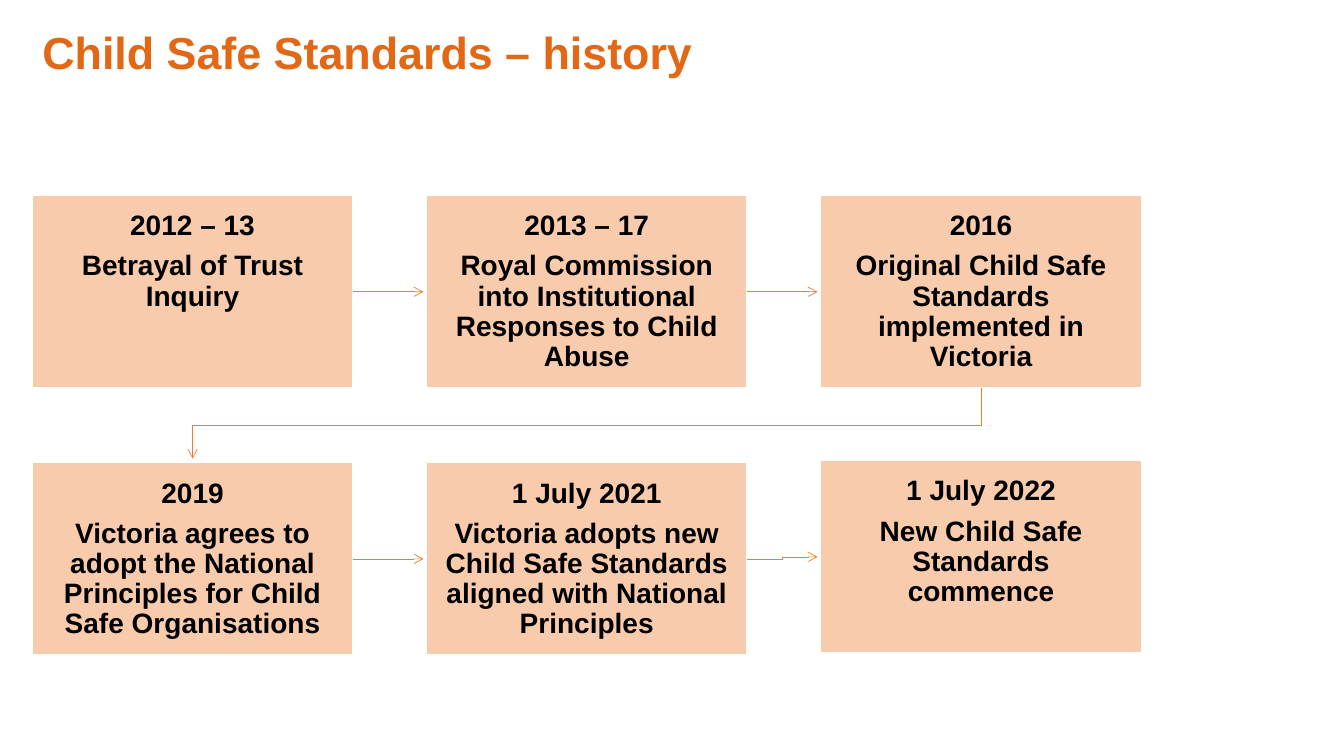
from dataclasses import dataclass

from lxml.etree import SubElement
from pptx import Presentation
from pptx.dml.color import RGBColor
from pptx.enum.shapes import MSO_CONNECTOR as Link, MSO_SHAPE as Shape
from pptx.enum.text import MSO_ANCHOR as Anchor, MSO_AUTO_SIZE as Auto, PP_ALIGN as Align
from pptx.oxml.ns import qn
from pptx.util import Pt

PX = 9144  # EMU in one px, 100 px to the inch
HUE = {"title": "E26815", "box": "F8CBAD", "edge": "FFFFFF", "arrow": "ED7D31", "text": "000000"}
LEFT, TOP, WIDE, HIGH = 32, 194, 318, 191
STEP_X, STEP_Y, COLS = 391, 265, 3
GAP = 3  # space between an arrow tip and its box


@dataclass
class Stage:
    date: str
    lines: tuple[str, ...]
    lift: int = 0


STAGES = [
    Stage("2012 – 13", ("Betrayal of Trust Inquiry",)),
    Stage("2013 – 17", ("Royal Commission into Institutional Responses to Child Abuse",)),
    Stage("2016", ("Original Child Safe Standards implemented in Victoria",)),
    Stage("2019", ("Victoria agrees to adopt the National Principles for Child Safe Organisations",)),
    Stage("1 July 2021", ("Victoria adopts new Child Safe Standards aligned with National Principles",)),
    Stage("1 July 2022", ("New Child Safe Standards", "commence"), lift=2),
]


def color(name: str) -> RGBColor:
    return RGBColor.from_string(HUE[name])


def apply(target, form: dict) -> None:
    for key, value in form.items():
        setattr(target, key, value)


def write(frame, lines: list[str], size: int, hue: str, align, inset: int) -> None:
    """Fill a text frame with bold paragraphs, spaced after the first."""
    apply(frame, {"word_wrap": True, "auto_size": Auto.NONE, "vertical_anchor": Anchor.TOP})
    if inset:
        apply(frame, {f"margin_{side}": inset * PX for side in ("left", "top", "right", "bottom")})
    frame.text = "\n".join(lines)
    for i, para in enumerate(frame.paragraphs):
        after = Pt(7) if i == 0 and len(lines) > 1 else Pt(0)
        apply(para, {"alignment": align, "line_spacing": 0.9, "space_before": Pt(0), "space_after": after})
        apply(para.font, {"name": "Arial", "size": Pt(size), "bold": True})
        para.font.color.rgb = color(hue)


def add_box(shapes, stage: Stage, col: int, row: int):
    x, y = LEFT + col * STEP_X, TOP + row * STEP_Y - stage.lift
    box = shapes.add_shape(Shape.RECTANGLE, x * PX, y * PX, WIDE * PX, HIGH * PX)
    box.shadow.inherit = False
    box.fill.solid()
    box.fill.fore_color.rgb = color("box")
    box.line.color.rgb = color("edge")
    box.line.width = Pt(1)
    write(box.text_frame, [stage.date, *stage.lines], 20, "text", Align.CENTER, 16)
    return box


def style_arrow(line) -> None:
    line.color.rgb = color("arrow")
    line.width = Pt(0.5)
    SubElement(line._get_or_add_ln(), qn("a:tailEnd"), type="arrow")


def add_arrow(shapes, start, end) -> None:
    """Link two neighbours in a row, bending if they are not level."""
    x1, y1 = start.left + start.width, start.top + start.height // 2
    x2, y2 = end.left - GAP * PX, end.top + end.height // 2
    kind = Link.STRAIGHT if y1 == y2 else Link.ELBOW
    arrow = shapes.add_connector(kind, x1, y1, x2, y2)
    arrow.begin_connect(start, 3)
    style_arrow(arrow.line)
    SubElement(arrow._element.spPr, qn("a:effectLst"))


def add_turn(shapes, start, end) -> None:
    """Lead from the end of one row to the start of the next."""
    x1, y1 = start.left + start.width // 2, start.top + start.height
    x2, y2 = end.left + end.width // 2, end.top - 4 * PX
    mid = (y1 + end.top) // 2
    pen = shapes.build_freeform(x1, y1)
    pen.add_line_segments([(x1, mid), (x2, mid), (x2, y2)], close=False)
    turn = pen.convert_to_shape()
    turn.shadow.inherit = False
    turn.fill.background()
    style_arrow(turn.line)


def main() -> None:
    deck = Presentation()
    apply(deck, {"slide_width": 1333 * PX, "slide_height": 750 * PX})
    slide = deck.slides.add_slide(deck.slide_layouts[5])
    shapes = slide.shapes
    title = shapes.title
    apply(title, {"left": LEFT * PX, "top": 26 * PX, "width": 1101 * PX, "height": 142 * PX})
    write(title.text_frame, ["Child Safe Standards – history"], 32, "title", Align.LEFT, 0)

    boxes = [add_box(shapes, stage, i % COLS, i // COLS) for i, stage in enumerate(STAGES)]
    for i, (start, end) in enumerate(zip(boxes, boxes[1:]), 1):
        link = add_arrow if i % COLS else add_turn
        link(shapes, start, end)
    deck.save("out.pptx")


if __name__ == "__main__":
    main()
